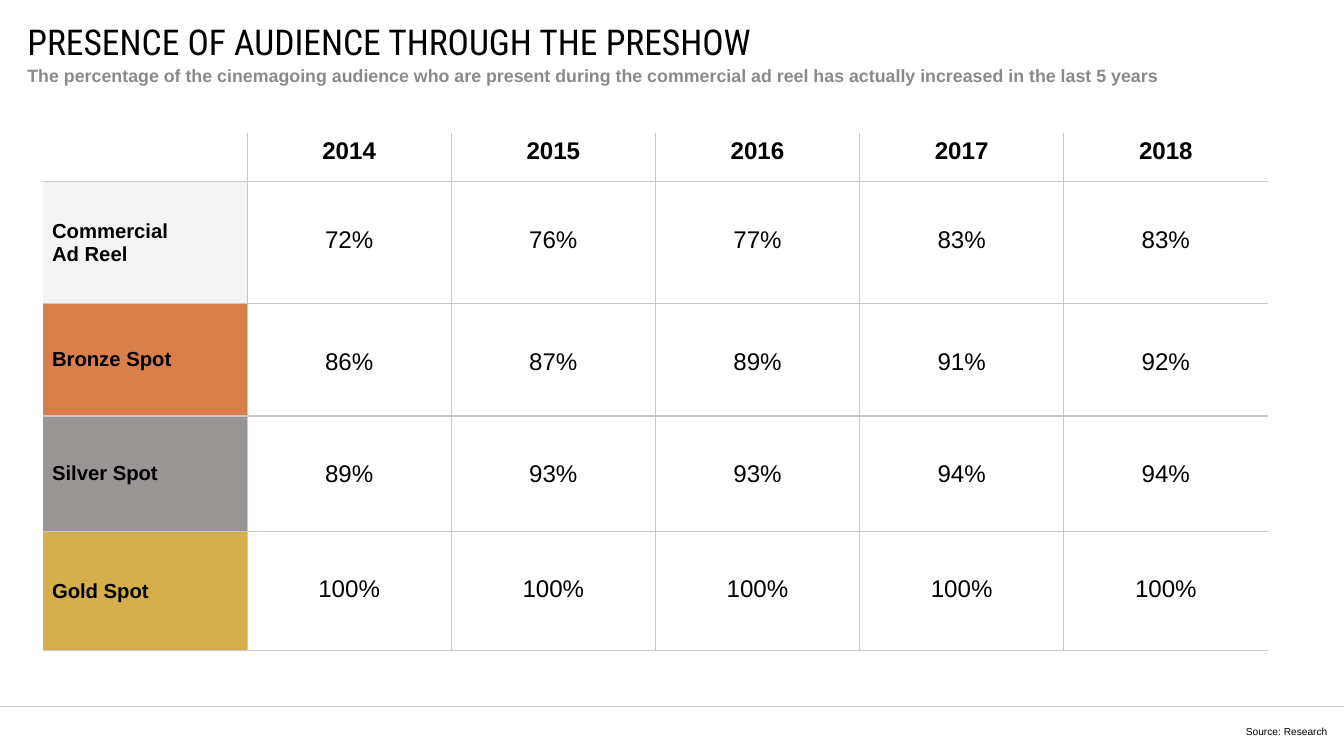
from lxml import etree
from pptx import Presentation
from pptx.dml.color import RGBColor
from pptx.enum.shapes import MSO_CONNECTOR
from pptx.enum.text import MSO_ANCHOR, PP_ALIGN
from pptx.oxml.ns import qn
from pptx.util import Pt

LEFT, CENTER, RIGHT = PP_ALIGN.LEFT, PP_ALIGN.CENTER, PP_ALIGN.RIGHT
TOP, MIDDLE = MSO_ANCHOR.TOP, MSO_ANCHOR.MIDDLE
STRAIGHT = MSO_CONNECTOR.STRAIGHT

WIDTH, HEIGHT = 1058.4, 595.44
RULE = "CAC8C8"
YEARS = ["2014", "2015", "2016", "2017", "2018"]
SPOTS = [
    ("Commercial\nAd Reel", "F4F4F4", [72, 76, 77, 83, 83]),
    ("Bronze Spot", "D87F4C", [86, 87, 89, 91, 92]),
    ("Silver Spot", "999595", [89, 93, 93, 94, 94]),
    ("Gold Spot", "D4AF4B", [100, 100, 100, 100, 100]),
]
COL = 160.8
ROWS = [38.2, 95.8, 88.6, 90.7, 94.3]


def paint(color, value):
    """Set a color format from a hex string."""
    color.rgb = RGBColor.from_string(value)


def write(frame, text, size=19, bold=False, color="000000", font="Arial",
          align=LEFT, anchor=TOP, space=None):
    """Fill a text frame, one paragraph for each line of text."""
    frame.word_wrap = True
    frame.vertical_anchor = anchor
    for i, line in enumerate(text.split("\n")):
        para = frame.paragraphs[0] if i == 0 else frame.add_paragraph()
        para.alignment = align
        if space:
            para.line_spacing = space
        run = para.add_run()
        run.text = line
        run.font.size = Pt(size)
        run.font.bold = bold
        run.font.name = font
        paint(run.font.color, color)


def add_label(slide, text, x, y, w, h, **style):
    """Add a text box without margins."""
    frame = slide.shapes.add_textbox(Pt(x), Pt(y), Pt(w), Pt(h)).text_frame
    frame.margin_left = frame.margin_right = 0
    frame.margin_top = frame.margin_bottom = 0
    write(frame, text, **style)


def add_rule(slide, y):
    """Draw a thin line across the slide."""
    line = slide.shapes.add_connector(STRAIGHT, 0, Pt(y), Pt(WIDTH), Pt(y))
    line.line.width = Pt(0.5)
    paint(line.line.color, RULE)
    etree.SubElement(line._element.spPr, qn("a:effectLst"))


def edge(cell, sides):
    """Draw the named sides of a cell and clear the others."""
    props = cell._tc.get_or_add_tcPr()
    for side in "LRTB":
        line = etree.SubElement(props, qn("a:ln" + side), w=str(Pt(1)))
        if side in sides:
            fill = etree.SubElement(line, qn("a:solidFill"))
            etree.SubElement(fill, qn("a:srgbClr"), val=RULE)
        else:
            etree.SubElement(line, qn("a:noFill"))


def add_grid(slide, x, y):
    """Add the table of spots by year, ruled only on the inside and below."""
    count = len(YEARS) + 1
    table = slide.shapes.add_table(len(ROWS), count, Pt(x), Pt(y),
                                   Pt(COL * count), Pt(sum(ROWS))).table
    table.first_row = table.horz_banding = False
    for col in table.columns:
        col.width = Pt(COL)
    for r, high in enumerate(ROWS):
        table.rows[r].height = Pt(high)
        for c in range(count):
            sides = "B" + "T" * (r > 0) + "L" * (c > 0) + "R" * (c < count - 1)
            cell = table.cell(r, c)
            edge(cell, sides)
            cell.fill.background()
    for c, year in enumerate(YEARS, 1):
        write(table.cell(0, c).text_frame, year, bold=True, align=CENTER)
    for r, (name, color, shares) in enumerate(SPOTS, 1):
        head = table.cell(r, 0)
        head.fill.solid()
        paint(head.fill.fore_color, color)
        write(head.text_frame, name, size=16, bold=True)
        head.vertical_anchor = MIDDLE
        for c, share in enumerate(shares, 1):
            write(table.cell(r, c).text_frame, f"{share}%", align=CENTER,
                  space=2.5)


def main():
    """Build the slide and save it."""
    deck = Presentation()
    deck.slide_width, deck.slide_height = Pt(WIDTH), Pt(HEIGHT)
    slide = deck.slides.add_slide(deck.slide_layouts[6])
    add_rule(slide, 556.6)
    add_label(slide, "Source: Research", 612.7, 571.7, 432.7, 9.4, size=8,
              align=RIGHT, anchor=MIDDLE)
    add_label(slide, "PRESENCE OF AUDIENCE THROUGH THE PRESHOW",
              21.6, 21.6, 977.8, 22.3, size=28, font="Roboto Condensed",
              anchor=MIDDLE)
    add_grid(slide, 33.8, 105.1)
    add_label(slide, "The percentage of the cinemagoing audience who are "
              "present during the commercial ad reel has actually increased "
              "in the last 5 years", 21.6, 51.1, 948.2, 34.6, size=14,
              bold=True, color="8A8A8D", space=Pt(16.8))
    deck.save("out.pptx")


if __name__ == "__main__":
    main()
